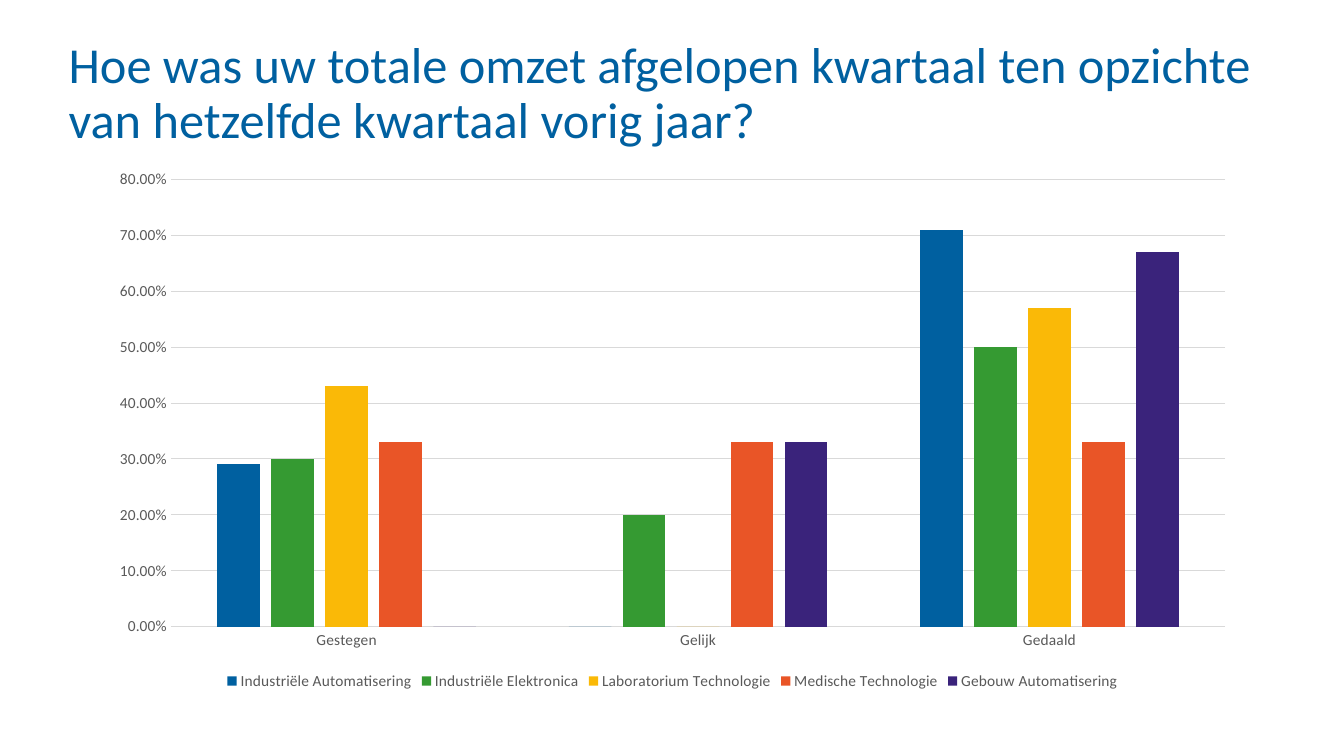
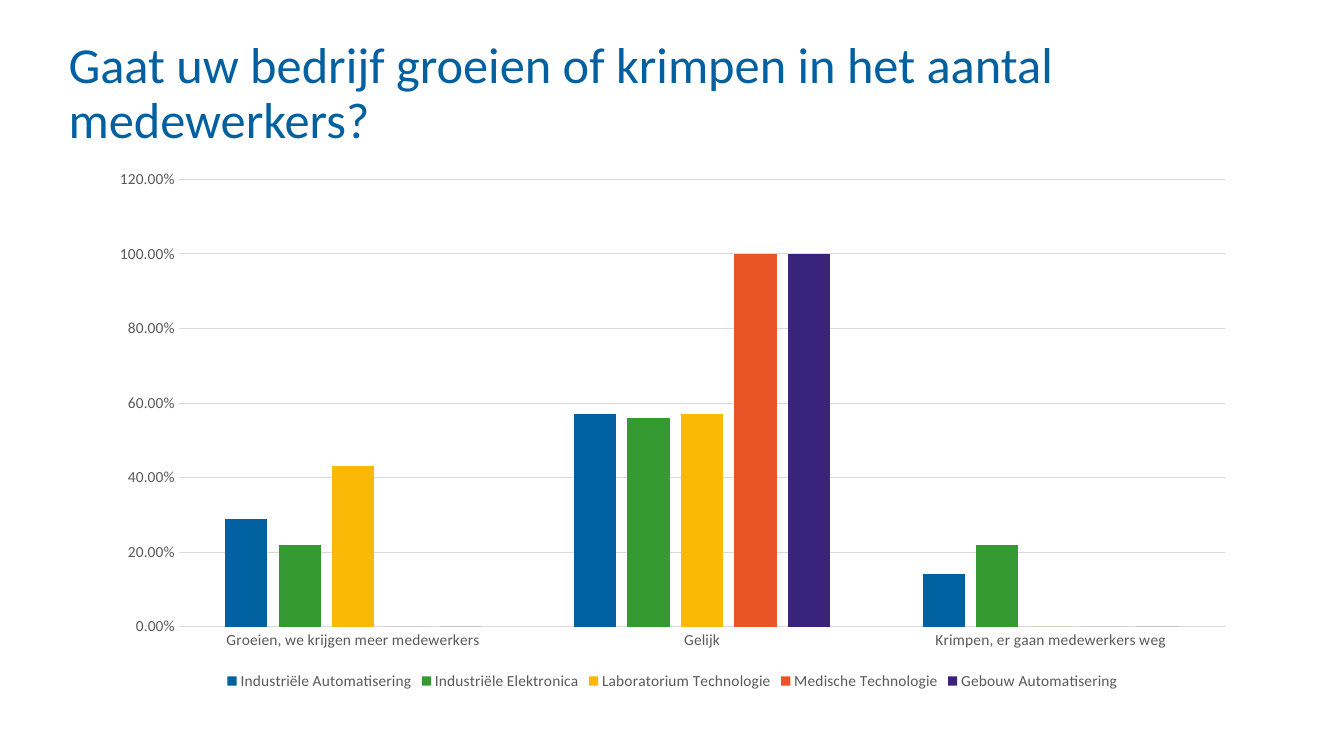
"""Build two survey slides, each with a title and a clustered column chart."""
from pptx import Presentation
from pptx.chart.data import CategoryChartData
from pptx.dml.color import RGBColor
from pptx.enum.chart import XL_CHART_TYPE, XL_LEGEND_POSITION, XL_TICK_MARK
from pptx.enum.text import MSO_ANCHOR, MSO_AUTO_SIZE, PP_ALIGN
from pptx.util import Inches, Pt

BLUE = RGBColor(0x00, 0x60, 0xA0)
GREEN = RGBColor(0x35, 0x9A, 0x32)
YELLOW = RGBColor(0xFA, 0xB9, 0x07)
ORANGE = RGBColor(0xE9, 0x55, 0x27)
PURPLE = RGBColor(0x3A, 0x23, 0x7B)
GREY = RGBColor(0x59, 0x59, 0x59)
RULE = RGBColor(0xD9, 0xD9, 0xD9)
BLACK = RGBColor(0x00, 0x00, 0x00)

FACE = "Calibri"
SECTORS = {
    "Industriële Automatisering": BLUE,
    "Industriële Elektronica": GREEN,
    "Laboratorium Technologie": YELLOW,
    "Medische Technologie": ORANGE,
    "Gebouw Automatisering": PURPLE,
}
CHART_BOX = (0.96, 1.58, 11.42, 5.31)

SURVEY = [
    {
        "title": "Hoe was uw totale omzet afgelopen kwartaal ten opzichte "
                 "van hetzelfde kwartaal vorig jaar?",
        "box": (0.68, 0.4, 11.89, 0.76),
        "cats": ["Gestegen", "Gelijk", "Gedaald"],
        "rows": [(0.29, 0, 0.71), (0.3, 0.2, 0.5), (0.43, 0, 0.57),
                 (0.33, 0.33, 0.33), (0, 0.33, 0.67)],
        "top": 0.8,
        "step": 0.1,
    },
    {
        "title": "Gaat uw bedrijf groeien of krimpen in het aantal medewerkers?",
        "box": (0.68, 0.4, 12.14, 0.76),
        "cats": ["Groeien, we krijgen meer medewerkers", "Gelijk",
                 "Krimpen, er gaan medewerkers weg"],
        "rows": [(0.29, 0.57, 0.14), (0.22, 0.56, 0.22), (0.43, 0.57, 0),
                 (0, 1, 0), (0, 1, 0)],
        "top": 1.2,
        "step": 0.2,
    },
]


def style(font, size=11, color=GREY):
    """Set the face, size and colour of a font."""
    font.name = FACE
    font.size = Pt(size)
    font.color.rgb = color


def write(frame, text, size=36, color=BLUE, space=0.9):
    """Put formatted text in a frame without margins."""
    frame.margin_left = frame.margin_right = 0
    frame.margin_top = frame.margin_bottom = 0
    frame.word_wrap = True
    frame.auto_size = MSO_AUTO_SIZE.NONE
    frame.vertical_anchor = MSO_ANCHOR.TOP
    para = frame.paragraphs[0]
    para.alignment = PP_ALIGN.LEFT
    para.line_spacing = space
    run = para.add_run()
    run.text = text
    style(run.font, size, color)


def add_title(slide, text, box):
    """Place the title placeholder in its box."""
    title = slide.shapes.title
    title.left, title.top, title.width, title.height = map(Inches, box)
    write(title.text_frame, text)


def rule(line):
    """Draw a thin grey chart line."""
    line.color.rgb = RULE
    line.width = Pt(0.75)


def add_columns(slide, box, cats, rows, top, step):
    """Add a column chart with one series per sector."""
    data = CategoryChartData(number_format="0.00%")
    data.categories = cats
    for name, row in zip(SECTORS, rows):
        data.add_series(name, row)
    chart = slide.shapes.add_chart(
        XL_CHART_TYPE.COLUMN_CLUSTERED, *map(Inches, box), data).chart
    chart.has_title = False
    style(chart.font, 10, BLACK)

    plot = chart.plots[0]
    plot.gap_width, plot.overlap = 219, -27
    plot.vary_by_categories = False
    for series, color in zip(plot.series, SECTORS.values()):
        series.format.fill.solid()
        series.format.fill.fore_color.rgb = color
        series.invert_if_negative = False

    for axis in (chart.category_axis, chart.value_axis):
        axis.major_tick_mark = axis.minor_tick_mark = XL_TICK_MARK.NONE
        style(axis.tick_labels.font)
    rule(chart.category_axis.format.line)
    value = chart.value_axis
    value.minimum_scale, value.maximum_scale = 0, top
    value.major_unit = step
    value.tick_labels.number_format = "0.00%"
    value.tick_labels.number_format_is_linked = False
    value.format.line.fill.background()
    value.has_major_gridlines = True
    rule(value.major_gridlines.format.line)

    chart.has_legend = True
    chart.legend.position = XL_LEGEND_POSITION.BOTTOM
    chart.legend.include_in_layout = False
    style(chart.legend.font)


def add_page(deck, title, box, **chart):
    """Add one survey slide."""
    slide = deck.slides.add_slide(deck.slide_layouts[5])
    add_title(slide, title, box)
    add_columns(slide, CHART_BOX, **chart)


def main():
    """Build and save the deck."""
    deck = Presentation()
    deck.slide_width, deck.slide_height = Inches(13.33), Inches(7.5)
    for page in SURVEY:
        add_page(deck, **page)
    deck.save("out.pptx")


if __name__ == "__main__":
    main()
